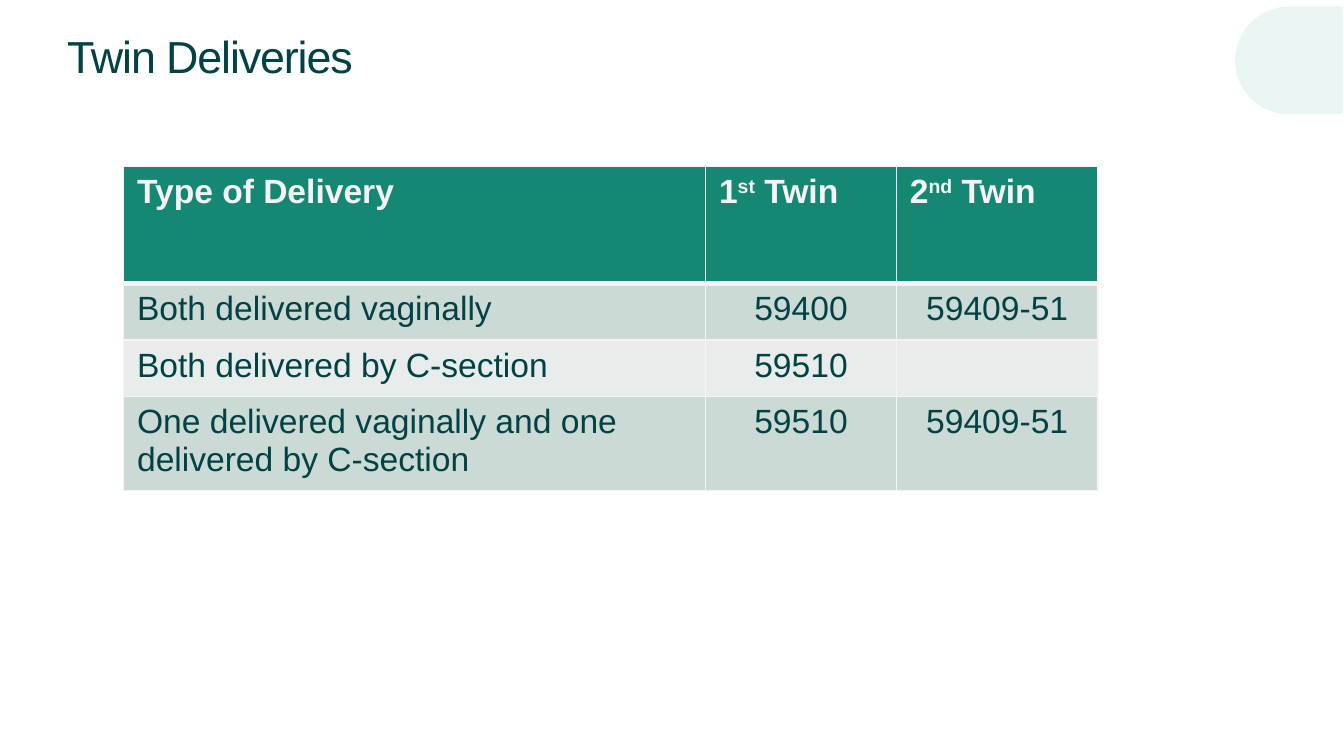
from lxml import etree
from pptx import Presentation
from pptx.dml.color import RGBColor
from pptx.enum.shapes import MSO_SHAPE
from pptx.enum.text import MSO_ANCHOR, PP_ALIGN
from pptx.oxml.ns import qn
from pptx.util import Inches, Pt

DELAY = MSO_SHAPE.FLOWCHART_DELAY
MIDDLE = MSO_ANCHOR.MIDDLE
LEFT, CENTER = PP_ALIGN.LEFT, PP_ALIGN.CENTER
COLORS = {
    "text": "014245",
    "light": "F6F3F5",
    "header": "158873",
    "odd_row": "CCDAD5",
    "even_row": "E8EDEB",
    "accent": "EAF6F3",
}


def set_font(para, size, color, bold=False):
    para.font.name = "Arial"
    para.font.size = Pt(size)
    para.font.bold = bold
    para.font.color.rgb = RGBColor.from_string(COLORS[color])


def add_borders(cell, bottom_width):
    properties = cell._tc.get_or_add_tcPr()
    for side, width in (("L", 1), ("R", 1), ("T", 1), ("B", bottom_width)):
        line = etree.SubElement(properties, qn(f"a:ln{side}"), w=str(Pt(width)))
        fill = etree.SubElement(line, qn("a:solidFill"))
        etree.SubElement(fill, qn("a:srgbClr"), val=COLORS["light"])


deck = Presentation()
deck.slide_width = Inches(10)
deck.slide_height = Inches(10 * 9 / 16)
page = deck.slides.add_slide(deck.slide_layouts[6])

corner = page.shapes.add_shape(DELAY, Inches(9.19), Inches(0.05), Inches(0.8), Inches(0.8))
corner.rotation = 180
corner.shadow.inherit = False
corner.fill.solid()
corner.fill.fore_color.rgb = RGBColor.from_string(COLORS["accent"])
corner.line.fill.background()

title = page.shapes.add_textbox(Inches(0.33), Inches(0.12), Inches(8.63), Inches(0.58))
frame = title.text_frame
frame.word_wrap = True
frame.vertical_anchor = MIDDLE
frame.margin_left = Inches(0.17)
frame.margin_right = Inches(0.08)
frame.margin_top = frame.margin_bottom = Inches(0.04)
para = frame.paragraphs[0]
span = para.add_run()
span.text = "Twin Deliveries"
span._r.get_or_add_rPr().set("spc", "-60")
set_font(para, 24, "text")

rows = [
    [["Type of Delivery"], ["1", "st", " Twin"], ["2", "nd", " Twin"]],
    [["Both delivered vaginally"], ["59400"], ["59409-51"]],
    [["Both delivered by C-section"], ["59510"], []],
    [["One delivered vaginally and one delivered by C-section"], ["59510"], ["59409-51"]],
]
column_widths = [4.33, 1.42, 1.5]
row_heights = [0.87, 0.42, 0.42, 0.42]
row_fills = ["header", "odd_row", "even_row", "odd_row"]

table = page.shapes.add_table(
    len(rows), len(column_widths), Inches(0.92), Inches(1.24),
    Inches(sum(column_widths)), Inches(sum(row_heights)),
).table
table.first_row = False
table.horz_banding = False
for column, width in zip(table.columns, column_widths):
    column.width = Inches(width)

for row_index, row in enumerate(rows):
    table.rows[row_index].height = Inches(row_heights[row_index])
    is_header = row_index == 0
    for column_index, pieces in enumerate(row):
        cell = table.cell(row_index, column_index)
        add_borders(cell, 3 if is_header else 1)
        cell.fill.solid()
        cell.fill.fore_color.rgb = RGBColor.from_string(COLORS[row_fills[row_index]])
        para = cell.text_frame.paragraphs[0]
        para.alignment = LEFT if is_header or column_index == 0 else CENTER
        set_font(para, 18, "light" if is_header else "text", is_header)
        for piece in pieces:
            span = para.add_run()
            span.text = piece
            if piece in ("st", "nd"):
                span._r.get_or_add_rPr().set("baseline", "30000")

deck.save("out.pptx")
